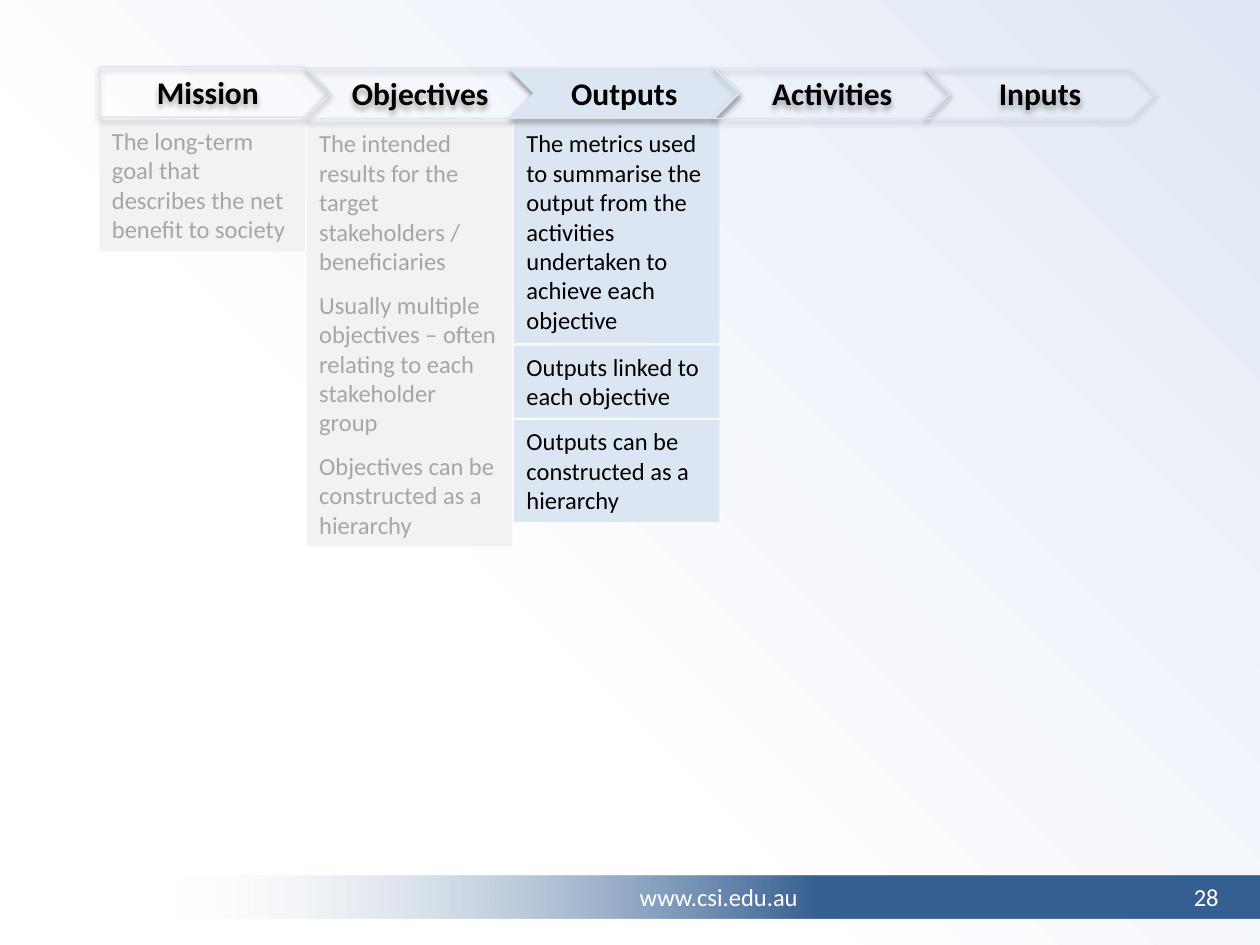
"""Build the results-chain slide with the Outputs stage highlighted."""
from lxml import etree
from pptx import Presentation
from pptx.dml.color import RGBColor
from pptx.enum.shapes import MSO_SHAPE
from pptx.enum.text import MSO_ANCHOR, PP_ALIGN
from pptx.oxml import parse_xml
from pptx.oxml.ns import nsdecls, qn
from pptx.util import Inches, Pt

RECT, PENTAGON, CHEVRON = MSO_SHAPE.RECTANGLE, MSO_SHAPE.PENTAGON, MSO_SHAPE.CHEVRON
LEFT, CENTER, RIGHT = PP_ALIGN.LEFT, PP_ALIGN.CENTER, PP_ALIGN.RIGHT
COLORS = {"white": "FFFFFF", "sky": "E1E8F5", "pale": "DCE6F2", "navy": "376092",
          "faded": "F2F2F2", "faded_text": "A6A6A6", "black": "000000"}
FONT = "Calibri"

STAGES = [
    ("Mission", 0.79, 1.82), ("Objectives", 2.43, 1.81), ("Outputs", 4.04, 1.83),
    ("Activities", 5.67, 1.87), ("Inputs", 7.34, 1.83),
]
ACTIVE = "Outputs"
NOTES = [
    ("Mission", 0.95, 0, [
        ("The long-term goal that describes the net benefit to society", 4)]),
    ("Objectives", 0.97, 0, [
        ("The intended results for the target stakeholders / beneficiaries", 5),
        ("Usually multiple objectives – often relating to each stakeholder group", 5),
        ("Objectives can be constructed as a hierarchy", 3)]),
    ("Outputs", 0.97, 0.02, [
        ("The metrics used to summarise the output from the activities "
         "undertaken to achieve each objective", 7),
        ("Outputs linked to each objective", 2),
        ("Outputs can be constructed as a hierarchy", 3)]),
]
FOOTER, PAGE = "www.csi.edu.au", "28"
FOOTER_TOP, FOOTER_HEIGHT = 6.95, 0.34
NOTE_LEFT, NOTE_PITCH, NOTE_WIDTH = 0.79, 1.645, 1.63
LINE_HEIGHT, PADDING = 0.236, 0.1


def gradient(stops, direction):
    """Return a gradient fill from (percent, colour, alpha) stops."""
    marks = "".join(
        f'<a:gs pos="{at * 1000}"><a:srgbClr val="{COLORS[color]}">'
        f'<a:alpha val="{alpha * 1000}"/></a:srgbClr></a:gs>'
        for at, color, alpha in stops)
    return parse_xml(f'<a:gradFill {nsdecls("a")} rotWithShape="1">'
                     f'<a:gsLst>{marks}</a:gsLst>{direction}</a:gradFill>')


def write(shape, text, size, color, align=LEFT, bold=False):
    """Fill a shape with one formatted paragraph."""
    frame = shape.text_frame
    frame.word_wrap = True
    frame.vertical_anchor = MSO_ANCHOR.TOP
    frame.text = text
    paragraph = frame.paragraphs[0]
    paragraph.alignment = align
    font = paragraph.font
    font.name, font.size, font.bold = FONT, Pt(size), bold
    font.color.rgb = RGBColor.from_string(COLORS[color])


def add_box(slide, kind, left, top, width, height, fill=None):
    """Add a shape without outline or shadow."""
    shape = slide.shapes.add_shape(
        kind, Inches(left), Inches(top), Inches(width), Inches(height))
    shape.shadow.inherit = False
    shape.line.fill.background()
    if fill:
        shape.fill.solid()
        shape.fill.fore_color.rgb = RGBColor.from_string(COLORS[fill])
    else:
        shape.fill.background()
    return shape


def add_background(slide):
    """Shade the slide from the lower left corner."""
    slide.background.fill.solid()
    properties = slide.background.fill._xPr
    properties.replace(properties.find(qn("a:solidFill")), gradient(
        [(35, "white", 100), (100, "sky", 100)],
        '<a:path path="circle"><a:fillToRect t="100000" r="100000"/></a:path>'))


def add_footer(slide):
    """Add the fading address band and the page number."""
    band = add_box(slide, RECT, 1.41, FOOTER_TOP, 8.59, FOOTER_HEIGHT)
    properties = band._element.spPr
    properties.replace(properties.find(qn("a:noFill")), gradient(
        [(0, "pale", 0), (59, "navy", 100)], '<a:lin ang="0" scaled="0"/>'))
    write(band, FOOTER, 14, "white", CENTER)
    number = slide.shapes.add_textbox(
        Inches(9.22), Inches(FOOTER_TOP), Inches(0.55), Inches(FOOTER_HEIGHT))
    write(number, PAGE, 14, "white", RIGHT)


def add_notes(slide):
    """Stack the notes under their stages, sized by line count."""
    for column, (stage, top, gap, notes) in enumerate(NOTES):
        fill, color = ("pale", "black") if stage == ACTIVE else ("faded", "faded_text")
        for text, lines in notes:
            height = lines * LINE_HEIGHT + PADDING
            note = add_box(slide, RECT, NOTE_LEFT + column * NOTE_PITCH, top,
                           NOTE_WIDTH, height, fill)
            write(note, text, 14, color)
            top += height + gap


def add_stages(slide):
    """Add the row of arrows with a soft shadow."""
    for index, (name, left, width) in enumerate(STAGES):
        kind, top = (CHEVRON, 0.54) if index else (PENTAGON, 0.53)
        stage = add_box(slide, kind, left, top, width, 0.4,
                        "pale" if name == ACTIVE else None)
        stage.line.color.rgb = RGBColor.from_string(COLORS["pale"])
        stage.line.width = Pt(0.75)
        effects = stage._element.spPr.find(qn("a:effectLst"))
        shadow = etree.SubElement(
            effects, qn("a:outerShdw"), blurRad=str(Pt(3.5)), dist=str(Pt(2.2)),
            dir="5400000", rotWithShape="0")
        tint = etree.SubElement(shadow, qn("a:srgbClr"), val=COLORS["black"])
        etree.SubElement(tint, qn("a:alpha"), val="32000")
        write(stage, name, 18, "black", CENTER, True)


def main():
    """Assemble and save the slide."""
    deck = Presentation()
    deck.slide_width, deck.slide_height = Inches(10), Inches(7.5)
    slide = deck.slides.add_slide(deck.slide_layouts[6])
    add_background(slide)
    add_footer(slide)
    add_notes(slide)
    add_stages(slide)
    deck.save("out.pptx")


if __name__ == "__main__":
    main()
